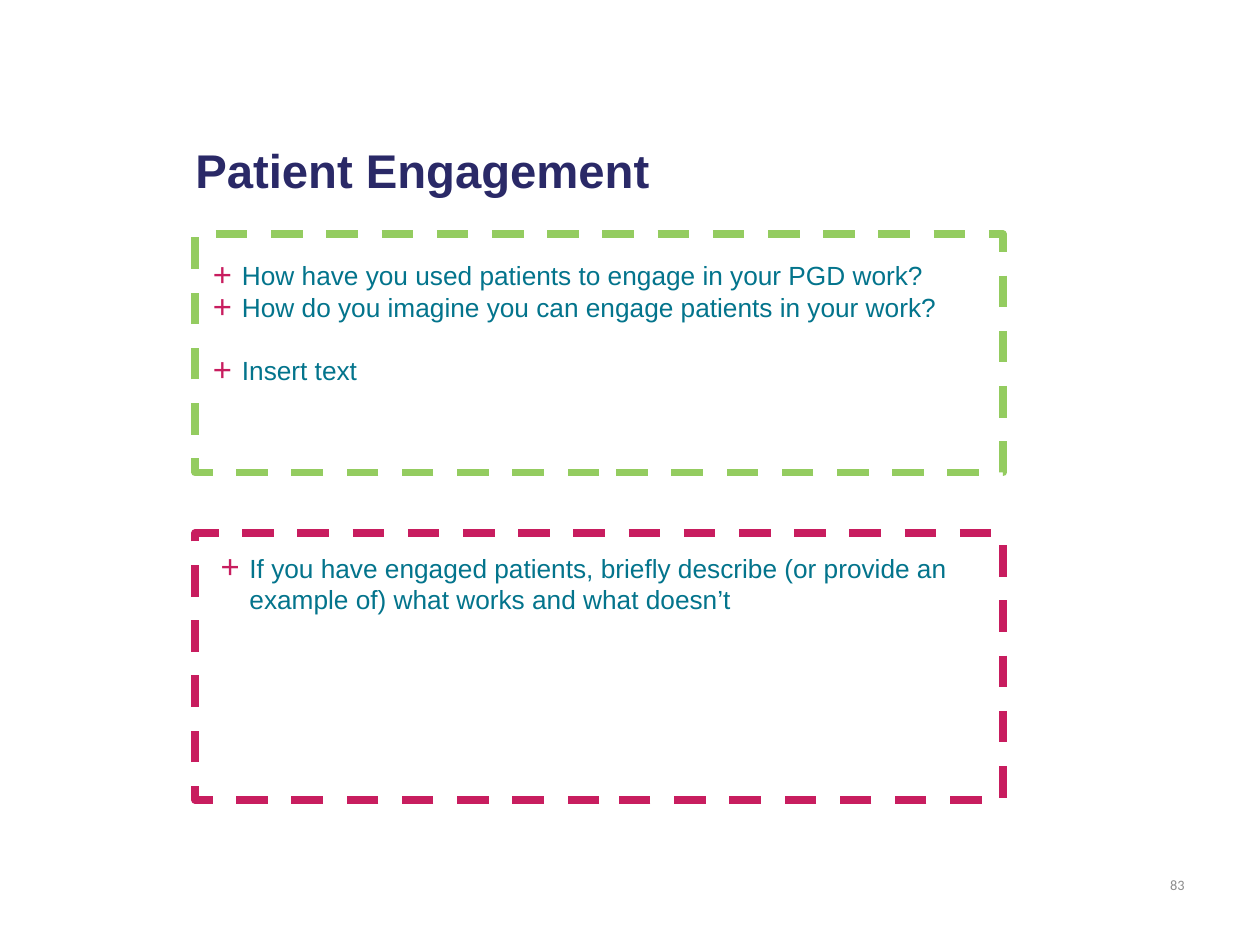
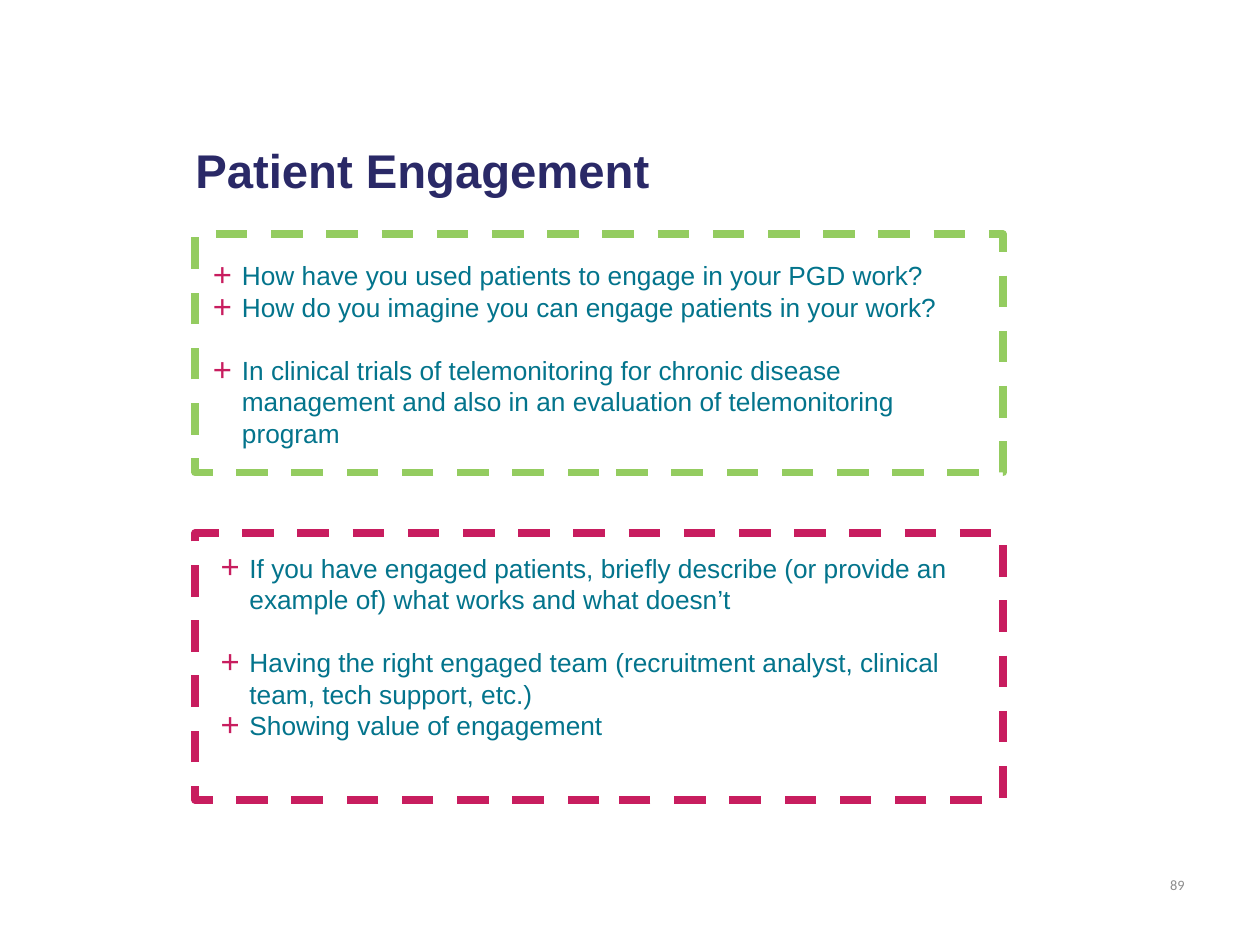
from lxml.etree import SubElement
from pptx import Presentation
from pptx.dml.color import RGBColor
from pptx.enum.dml import MSO_LINE_DASH_STYLE as Dash
from pptx.enum.shapes import MSO_SHAPE as Preset
from pptx.enum.text import MSO_ANCHOR as Anchor, MSO_AUTO_SIZE as AutoSize, PP_ALIGN as Align
from pptx.oxml.ns import qn
from pptx.util import Inches, Pt

WHITE = RGBColor(0xFF, 0xFF, 0xFF)
NAVY = RGBColor(0x2A, 0x29, 0x67)
TEAL = RGBColor(0x03, 0x74, 0x8C)
GREEN = RGBColor(0x94, 0xCC, 0x60)
MAGENTA = RGBColor(0xC8, 0x1D, 0x5F)
GREY = RGBColor(0x8C, 0x8C, 0x8C)

WIDTH, HEIGHT = Inches(10), Inches(7.5)
COLUMN, ROW = WIDTH // 100, HEIGHT // 75
TWO_CONTENT = 3

# Boxes are left, top, width, height in columns and rows.
TITLE_BOX = (14.5, 11.1, 69.2, 4.7)
NUMBER_BOX = (89.4, 68.2, 5.6, 4)
USE_FRAME = (15.5, 18.6, 64.1, 18.9)
LESSONS_FRAME = (15.5, 42.3, 64.1, 21.2)

LINE_PITCH = Pt(18)
BULLET_INDENT = Inches(0.23)

USE_QUESTIONS = [
    "How have you used patients to engage in your PGD work?",
    "How do you imagine you can engage patients in your work?",
]
LESSONS_QUESTIONS = [
    "If you have engaged patients, briefly describe (or provide an example of) "
    "what works and what doesn’t",
]


def grid(box):
    left, top, width, height = box
    return int(left * COLUMN), int(top * ROW), int(width * COLUMN), int(height * ROW)


def place(shape, box):
    shape.left, shape.top, shape.width, shape.height = grid(box)


def style_runs(paragraph, font_name, size, color, bold=False):
    for run in paragraph.runs:
        font = run.font
        font.name, font.size, font.bold = font_name, Pt(size), bold
        font.color.rgb = color


def add_plus_bullet(paragraph):
    properties = paragraph._p.get_or_add_pPr()
    properties.set("marL", str(BULLET_INDENT))
    properties.set("indent", str(-BULLET_INDENT))
    color = SubElement(properties, qn("a:buClr"))
    SubElement(color, qn("a:srgbClr"), val=str(MAGENTA))
    SubElement(properties, qn("a:buSzPct"), val="125000")
    SubElement(properties, qn("a:buFont"), typeface="Arial")
    SubElement(properties, qn("a:buChar"), char="+")


def fill_title(slide, text):
    title = slide.shapes.title
    place(title, TITLE_BOX)
    frame = title.text_frame
    frame.text = text
    frame.vertical_anchor = Anchor.MIDDLE
    frame.paragraphs[0].alignment = Align.LEFT
    style_runs(frame.paragraphs[0], "Arial", 27, NAVY, bold=True)


def add_page_number(slide, number):
    frame = slide.shapes.add_textbox(*grid(NUMBER_BOX)).text_frame
    frame.word_wrap = True
    frame.vertical_anchor = Anchor.MIDDLE
    frame.text = str(number)
    frame.paragraphs[0].alignment = Align.RIGHT
    style_runs(frame.paragraphs[0], "Calibri", 8.2, GREY)


def add_dashed_frame(slide, box, color):
    outline = slide.shapes.add_shape(Preset.RECTANGLE, *grid(box))
    outline.shadow.inherit = False
    outline.fill.solid()
    outline.fill.fore_color.rgb = WHITE
    outline.line.color.rgb = color
    outline.line.width = Pt(4.5)
    outline.line.dash_style = Dash.DASH


def fill_answers(body, box, questions, answers):
    """Lists the questions, then the answers one line further down."""
    place(body, box)
    frame = body.text_frame
    frame.auto_size = AutoSize.NONE
    frame.vertical_anchor = Anchor.TOP
    frame.text = "\n".join(questions + answers)
    for index, paragraph in enumerate(frame.paragraphs):
        add_plus_bullet(paragraph)
        paragraph.line_spacing = LINE_PITCH
        paragraph.space_before = LINE_PITCH if index == len(questions) else Pt(0)
        style_runs(paragraph, "Arial", 15, TEAL)


def add_panel(slide, body, box, color, text_box, questions, answers):
    """Draws a dashed frame with a list on it; text_box is relative to the frame."""
    add_dashed_frame(slide, box, color)
    slide.shapes._spTree.append(body._element)  # bring the list in front of its frame
    left, top, width, height = text_box
    fill_answers(body, (box[0] + left, box[1] + top, width, height), questions, answers)


def add_engagement_slide(deck, number, uses, use_rows, lessons, lesson_rows):
    slide = deck.slides.add_slide(deck.slide_layouts[TWO_CONTENT])
    _, use_body, lessons_body = slide.placeholders
    fill_title(slide, "Patient Engagement")
    add_page_number(slide, number)
    add_panel(slide, use_body, USE_FRAME, GREEN, (0.4, 1.5, 62.5, use_rows),
              USE_QUESTIONS, uses)
    add_panel(slide, lessons_body, LESSONS_FRAME, MAGENTA, (1, 1, 63.1, lesson_rows),
              LESSONS_QUESTIONS, lessons)


def main():
    deck = Presentation()
    deck.slide_width, deck.slide_height = WIDTH, HEIGHT
    add_engagement_slide(deck, 83, ["Insert text"], 21.2, [], 13.6)
    add_engagement_slide(
        deck, 89,
        ["In clinical trials of telemonitoring for chronic disease management "
         "and also in an evaluation of telemonitoring program"], 26.3,
        ["Having the right engaged team (recruitment analyst, clinical team, "
         "tech support, etc.)",
         "Showing value of engagement"], 21.2)
    deck.save("out.pptx")


if __name__ == "__main__":
    main()
